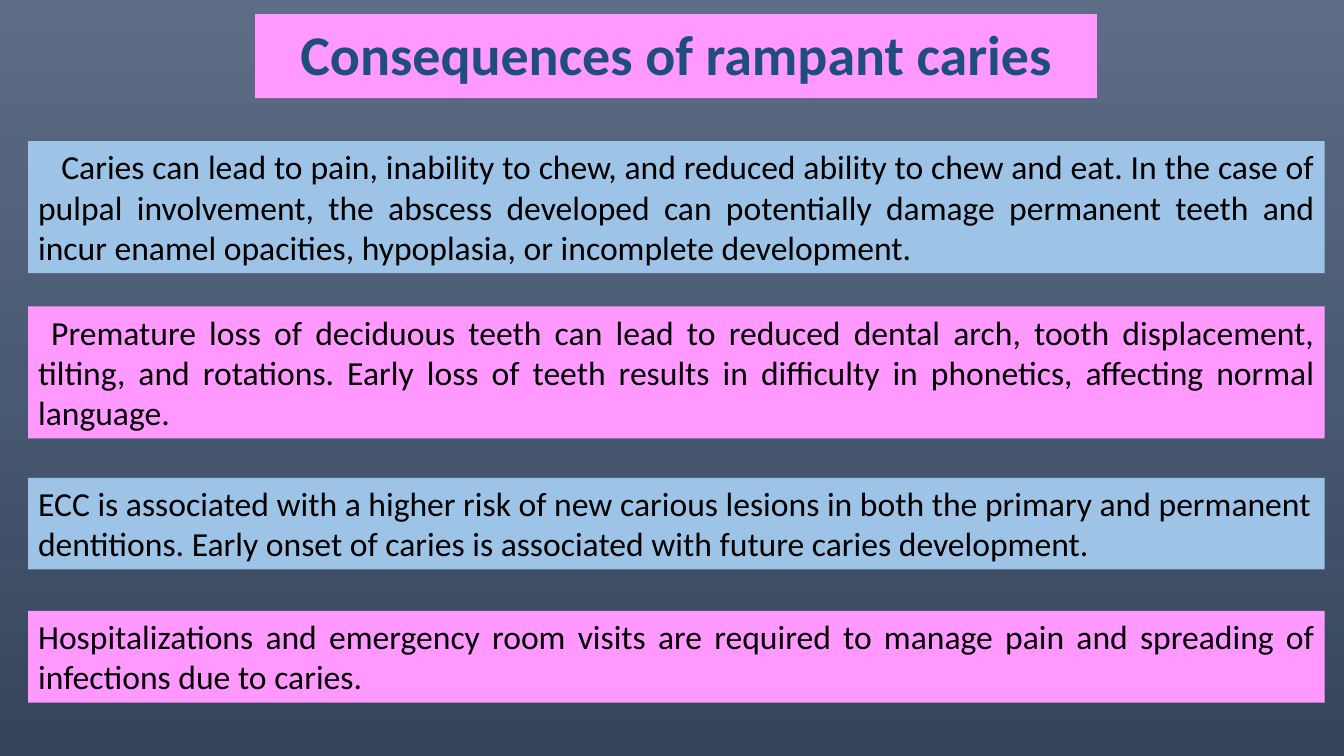
from copy import deepcopy

from pptx import Presentation
from pptx.dml.color import RGBColor
from pptx.enum.text import MSO_ANCHOR, MSO_AUTO_SIZE, PP_ALIGN
from pptx.oxml.ns import qn
from pptx.util import Inches, Pt

COLORS = {
    "pink": "FF99FF",
    "blue": "9DC3E6",
    "title": "1F4E79",
    "body": "000000",
    "top": "5E6D85",
    "middle": "495A73",
    "bottom": "35445A",
}
TITLE_FORMAT = {"name": "Calibri", "size": Pt(40), "bold": True}
BODY_FORMAT = {"name": "Calibri", "size": Pt(24), "bold": False}
BODY_LEFT, BODY_WIDTH = 0.28, 12.86

CONSEQUENCES = [
    (1.4, 1.31, "blue", PP_ALIGN.JUSTIFY, 0.23,
     "Caries can lead to pain, inability to chew, and reduced ability to chew and eat. "
     "In the case of pulpal involvement, the abscess developed can potentially damage "
     "permanent teeth and incur enamel opacities, hypoplasia, or incomplete development."),
    (3.04, 1.31, "pink", PP_ALIGN.JUSTIFY, 0.13,
     "Premature loss of deciduous teeth can lead to reduced dental arch, tooth "
     "displacement, tilting, and rotations. Early loss of teeth results in difficulty "
     "in phonetics, affecting normal language."),
    (4.74, 0.91, "blue", PP_ALIGN.LEFT, 0,
     "ECC is associated with a higher risk of new carious lesions in both the primary "
     "and permanent dentitions. Early onset of caries is associated with future caries "
     "development."),
    (6.06, 0.91, "pink", PP_ALIGN.JUSTIFY, 0,
     "Hospitalizations and emergency room visits are required to manage pain and "
     "spreading of infections due to caries."),
]


def rgb(name):
    return RGBColor.from_string(COLORS[name])


def paint_background(page):
    fill = page.background.fill
    fill.gradient()
    fill.gradient_angle = 270
    stop_list = page.element.find(".//" + qn("a:gsLst"))
    stop_list.insert(1, deepcopy(stop_list[0]))
    for stop, name, position in zip(
        fill.gradient_stops, ("top", "middle", "bottom"), (0, 0.5, 1)
    ):
        stop.color.rgb = rgb(name)
        stop.position = position


def fill_box(box, text, fill, color, font_format, align, indent=0):
    box.fill.solid()
    box.fill.fore_color.rgb = rgb(fill)
    frame = box.text_frame
    frame.word_wrap = True
    frame.auto_size = MSO_AUTO_SIZE.SHAPE_TO_FIT_TEXT
    frame.vertical_anchor = MSO_ANCHOR.TOP
    para = frame.paragraphs[0]
    para.alignment = align
    if indent:
        para._p.get_or_add_pPr().set("indent", str(Inches(indent)))
    span = para.add_run()
    span.text = text
    for name, value in font_format.items():
        setattr(span.font, name, value)
    span.font.color.rgb = rgb(color)


def add_title(page, text):
    title = page.shapes.title
    title.left, title.top = Inches(2.53), Inches(0.14)
    title.width, title.height = Inches(8.35), Inches(0.77)
    fill_box(title, text, "pink", "title", TITLE_FORMAT, PP_ALIGN.CENTER)


def add_consequence(page, top, height, fill, align, indent, text):
    box = page.shapes.add_textbox(
        Inches(BODY_LEFT), Inches(top), Inches(BODY_WIDTH), Inches(height)
    )
    fill_box(box, text, fill, "body", BODY_FORMAT, align, indent)


def main():
    deck = Presentation()
    deck.slide_width, deck.slide_height = Inches(13.33), Inches(7.5)
    page = deck.slides.add_slide(deck.slide_layouts[5])
    paint_background(page)
    add_title(page, "Consequences of rampant caries")
    for consequence in CONSEQUENCES:
        add_consequence(page, *consequence)
    deck.save("out.pptx")


if __name__ == "__main__":
    main()
